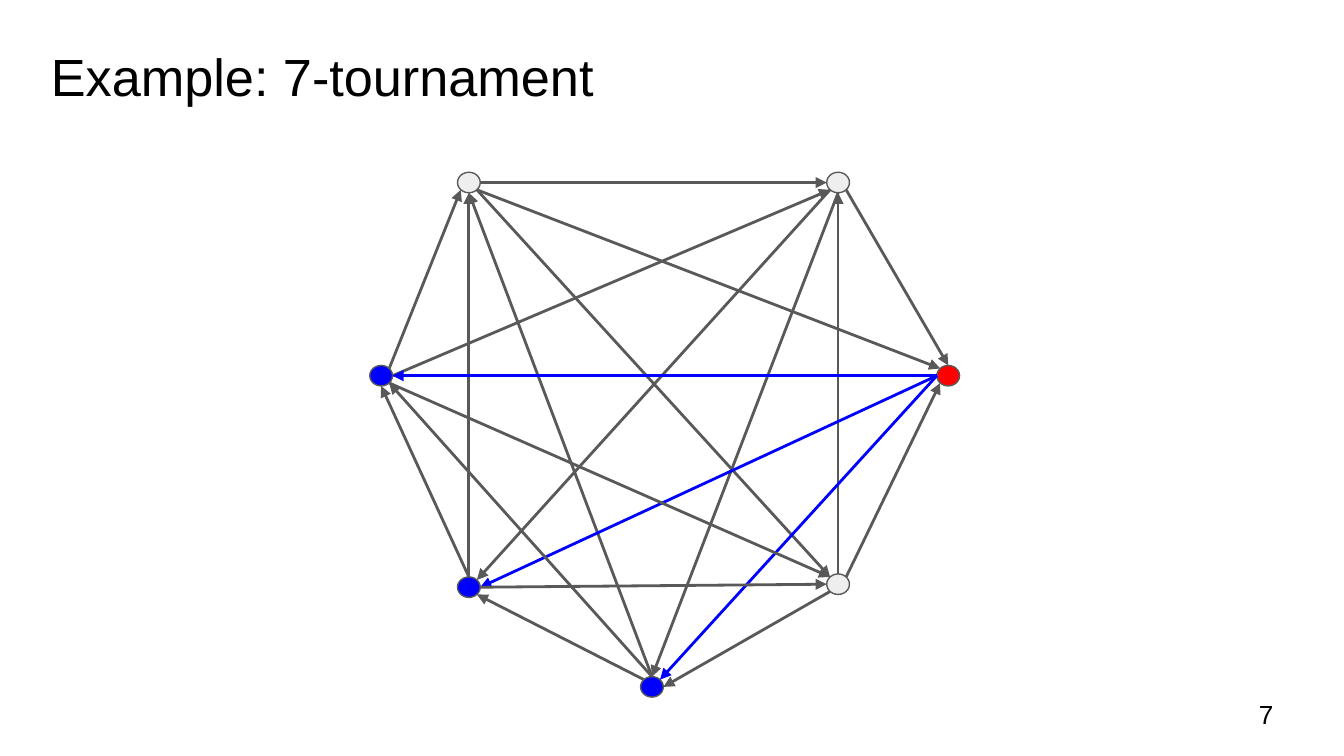
from math import sqrt

from lxml.etree import SubElement
from pptx import Presentation
from pptx.dml.color import RGBColor
from pptx.enum.shapes import MSO_CONNECTOR, MSO_SHAPE
from pptx.enum.text import MSO_ANCHOR
from pptx.oxml.ns import qn
from pptx.util import Pt

SLIDE_SIZE = (720, 405)
NODE_WIDTH, NODE_HEIGHT = 12.2, 11
GRAY, PALE, BLUE, RED, BLACK = "595959", "EEEEEE", "0000FF", "FF0000", "000000"

NODES = {
    "west": (204.2, 201.3, BLUE),
    "northwest": (251.2, 97.8, PALE),
    "northeast": (449, 97.8, PALE),
    "east": (508, 201.3, RED),
    "south": (349.3, 368, BLUE),
    "southwest": (251.2, 314.6, BLUE),
    "southeast": (449, 313, PALE),
}

ARROWS = [
    ("northwest", "right", "northeast", "left", GRAY),
    ("northwest", "bottom right", "east", "top left", GRAY),
    ("northwest", "bottom right", "southeast", "top left", GRAY),
    ("south", "top", "northwest", "bottom", GRAY),
    ("southwest", "top", "northwest", "bottom", GRAY),
    ("west", "top right", "northwest", "bottom left", GRAY),
    ("northeast", "bottom right", "east", "top", GRAY),
    ("southeast", "top", "northeast", "bottom", GRAY),
    ("southeast", "top right", "east", "bottom left", GRAY),
    ("northeast", "bottom", "south", "top", GRAY),
    ("northeast", "bottom left", "southwest", "top right", GRAY),
    ("west", "right", "northeast", "bottom left", GRAY),
    ("east", "left", "south", "top right", BLUE),
    ("east", "left", "southwest", "right", BLUE),
    ("east", "left", "west", "right", BLUE),
    ("west", "bottom right", "southeast", "top left", GRAY),
    ("southeast", "bottom left", "south", "right", GRAY),
    ("southwest", "right", "southeast", "left", GRAY),
    ("south", "top", "west", "bottom right", GRAY),
    ("south", "top left", "southwest", "bottom right", GRAY),
    ("southwest", "top", "west", "bottom", GRAY),
]

TEXTS = [
    ("Example: 7-tournament", (20.2, 16.6, 670.3, 45.4), 28, MSO_ANCHOR.TOP),
    ("7", (667.4, 367.2, 43.2, 31), 14, MSO_ANCHOR.MIDDLE),
]

DIRECTIONS = {"left": (-1, 0), "right": (1, 0), "top": (0, -1), "bottom": (0, 1)}


def color(value):
    """Turn a hex string into a colour."""
    return RGBColor.from_string(value)


def set_attributes(target, values):
    """Set every attribute named in a dict of format values."""
    for name, value in values.items():
        setattr(target, name, value)


def port(node, side):
    """Return the point on a node's rim that faces the named side."""
    center_x, center_y, _ = NODES[node]
    steps = [DIRECTIONS[word] for word in side.split()]
    reach = 1 / sqrt(len(steps))
    step_x, step_y = (sum(axis) for axis in zip(*steps))
    return (Pt(center_x + step_x * reach * NODE_WIDTH / 2),
            Pt(center_y + step_y * reach * NODE_HEIGHT / 2))


def add_node(page, center_x, center_y, fill):
    """Draw one vertex of the tournament."""
    node = page.shapes.add_shape(
        MSO_SHAPE.OVAL, Pt(center_x - NODE_WIDTH / 2), Pt(center_y - NODE_HEIGHT / 2),
        Pt(NODE_WIDTH), Pt(NODE_HEIGHT))
    node.shadow.inherit = False
    node.fill.solid()
    node.fill.fore_color.rgb = color(fill)
    node.line.color.rgb = color(GRAY)
    node.line.width = Pt(0.75)


def add_arrow(page, start, start_side, end, end_side, stroke):
    """Draw one directed edge between two vertices."""
    arrow = page.shapes.add_connector(
        MSO_CONNECTOR.STRAIGHT, *port(start, start_side), *port(end, end_side))
    arrow.line.color.rgb = color(stroke)
    arrow.line.width = Pt(1.5)
    properties = arrow.element.spPr
    SubElement(properties.find(qn("a:ln")), qn("a:tailEnd"), type="triangle", w="med", len="med")
    SubElement(properties, qn("a:effectLst"))


def add_text(page, text, place, size, anchor):
    """Add one text box."""
    box = page.shapes.add_textbox(*map(Pt, place))
    frame = box.text_frame
    margins = {f"margin_{side}": Pt(7.2) for side in DIRECTIONS}
    set_attributes(frame, {"word_wrap": True, "vertical_anchor": anchor, **margins})
    span = frame.paragraphs[0].add_run()
    span.text = text
    set_attributes(span.font, {"name": "Arial", "size": Pt(size)})
    span.font.color.rgb = color(BLACK)


def main():
    """Build the slide and save it."""
    deck = Presentation()
    deck.slide_width, deck.slide_height = map(Pt, SLIDE_SIZE)
    page = deck.slides.add_slide(deck.slide_layouts[6])
    for node in NODES.values():
        add_node(page, *node)
    for arrow in ARROWS:
        add_arrow(page, *arrow)
    for text in TEXTS:
        add_text(page, *text)
    deck.save("out.pptx")


if __name__ == "__main__":
    main()
